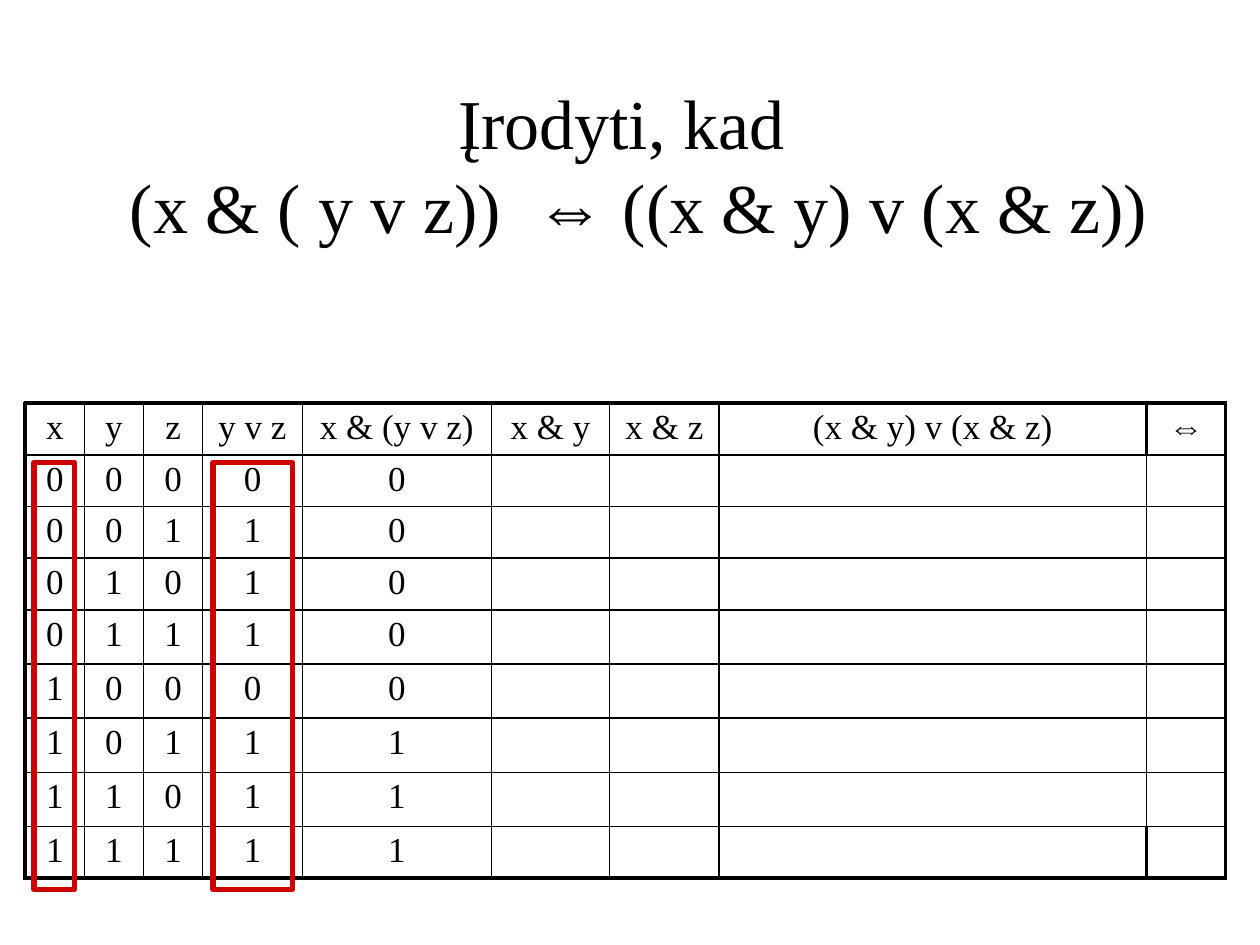
from dataclasses import dataclass
from itertools import product

from lxml.etree import SubElement
from pptx import Presentation
from pptx.dml.color import RGBColor
from pptx.enum.shapes import MSO_SHAPE as Preset
from pptx.enum.text import MSO_ANCHOR as Anchor, MSO_AUTO_SIZE as AutoSize, PP_ALIGN as Align
from pptx.oxml.ns import qn
from pptx.util import Inches, Pt

FONT = "Times New Roman"
BLACK = "000000"
RED = "CC0000"
THIN, THICK = 1, 2.25
HEADINGS = ["x", "y", "z", "y v z", "x & (y v z)", "x & y", "x & z", "(x & y) v (x & z)", "⇔"]
COLUMN_WIDTHS = [0.47, 0.47, 0.47, 0.79, 1.5, 0.94, 0.87, 3.39, 0.63]
ROW_HEIGHTS = [0.41] * 4 + [0.43] * 4 + [0.41]


@dataclass
class Frame:
    left: float
    top: float
    width: float
    height: float

    def lengths(self) -> list:
        return [Inches(value) for value in (self.left, self.top, self.width, self.height)]


TITLE = Frame(0.75, 0.67, 8.5, 1.25)
TABLE = Frame(0.2, 3.2, sum(COLUMN_WIDTHS), sum(ROW_HEIGHTS))
HIGHLIGHTS = [Frame(1.69, 3.67, 0.63, 3.39), Frame(0.27, 3.67, 0.32, 3.39)]


def color(value: str) -> RGBColor:
    return RGBColor.from_string(value)


def write(text_frame, text: str, *, size: float, bold: bool = False, space_before: int = 0) -> None:
    para = text_frame.paragraphs[0]
    para.text = text
    para.alignment = Align.CENTER
    for span in para.runs:
        span.font.name = FONT
        span.font.size = Pt(size)
        span.font.bold = bold
        span.font.color.rgb = color(BLACK)
    if space_before:
        spacing = SubElement(para._p.get_or_add_pPr(), qn("a:spcBef"))
        SubElement(spacing, qn("a:spcPct"), val=str(space_before * 1000))


def draw_borders(cell, widths: dict[str, float]) -> None:
    properties = cell._tc.get_or_add_tcPr()
    for side in "LRTB":
        line = SubElement(properties, qn(f"a:ln{side}"), w=str(Pt(widths[side])))
        fill = SubElement(line, qn("a:solidFill"))
        SubElement(fill, qn("a:srgbClr"), val=BLACK)


def border_widths(row: int, column: int) -> dict[str, float]:
    last_row, last_column = len(ROW_HEIGHTS) - 1, len(COLUMN_WIDTHS) - 1
    end_row = row in (0, last_row)
    thick = {
        "L": column == 0 or (end_row and column == last_column),
        "R": column == last_column or (end_row and column == last_column - 1),
        "T": row == 0,
        "B": row == last_row,
    }
    return {side: THICK if is_thick else THIN for side, is_thick in thick.items()}


def truth_rows() -> list[list[str]]:
    rows = []
    for x, y, z in product((0, 1), repeat=3):
        values = [x, y, z, y | z, x & (y | z)]
        blanks = [""] * (len(HEADINGS) - len(values))
        rows.append([str(value) for value in values] + blanks)
    return rows


def draw_table(page, frame: Frame, rows: list[list[str]]) -> None:
    table = page.shapes.add_table(len(rows), len(rows[0]), *frame.lengths()).table
    table.first_row = table.horz_banding = False
    for column, width in zip(table.columns, COLUMN_WIDTHS):
        column.width = Inches(width)
    for row, height in zip(table.rows, ROW_HEIGHTS):
        row.height = Inches(height)
    for row, texts in enumerate(rows):
        for column, text in enumerate(texts):
            cell = table.cell(row, column)
            cell.margin_top = cell.margin_bottom = Inches(0.04)
            draw_borders(cell, border_widths(row, column))
            cell.fill.background()
            if text:
                write(cell.text_frame, text, size=20, bold=text == "⇔", space_before=20)


def draw_highlight(page, frame: Frame) -> None:
    box = page.shapes.add_shape(Preset.RECTANGLE, *frame.lengths())
    box.shadow.inherit = False
    box.fill.background()
    box.line.color.rgb = color(RED)
    box.line.width = Pt(3)


def draw_title(page, frame: Frame, text: str) -> None:
    title = page.shapes.title
    title.left, title.top, title.width, title.height = frame.lengths()
    title.text_frame.word_wrap = True
    title.text_frame.auto_size = AutoSize.NONE
    title.text_frame.vertical_anchor = Anchor.MIDDLE
    write(title.text_frame, text, size=40)


def main() -> None:
    deck = Presentation()
    deck.slide_width, deck.slide_height = Inches(10), Inches(7.5)
    page = deck.slides.add_slide(deck.slide_layouts[5])
    draw_title(page, TITLE, "Įrodyti, kad \v (x & ( y v z))  ⇔ ((x & y) v (x & z))")
    draw_table(page, TABLE, [HEADINGS] + truth_rows())
    for frame in HIGHLIGHTS:
        draw_highlight(page, frame)
    deck.save("out.pptx")


if __name__ == "__main__":
    main()
